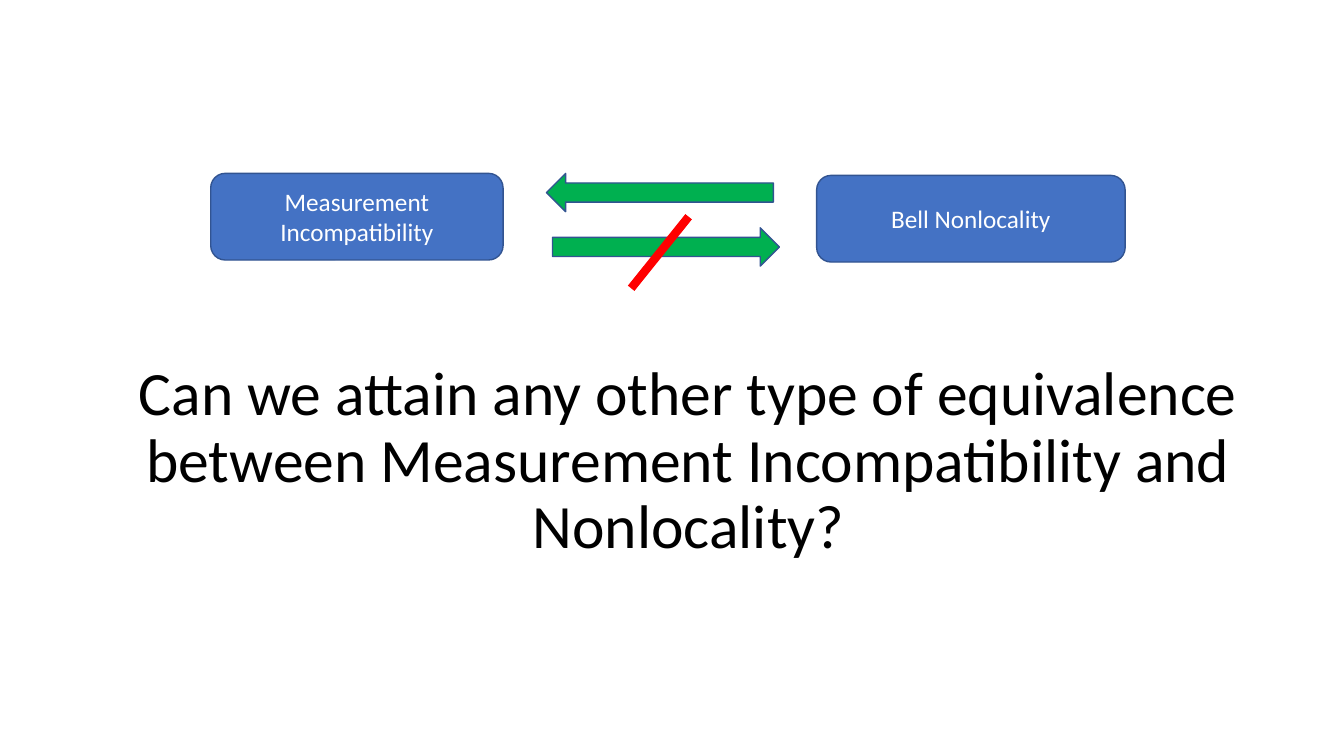
import dataclasses

import lxml.etree
import pptx
import pptx.dml.color
import pptx.enum.shapes
import pptx.enum.text
import pptx.oxml.ns
import pptx.shapes.autoshape
import pptx.slide
import pptx.util

EMU_PER_PX = 9144
SHAPES = pptx.enum.shapes.MSO_SHAPE


@dataclasses.dataclass(frozen=True)
class Theme:
    font: str = "Calibri"
    title_size: int = 44
    box_size: int = 18
    outline_width: int = 1
    strike_width: int = 6
    title: str = "000000"
    box: str = "4472C4"
    box_text: str = "FFFFFF"
    outline: str = "325491"
    arrow: str = "00B050"
    strike: str = "FF0000"


@dataclasses.dataclass(frozen=True)
class Block:
    kind: pptx.enum.shapes.MSO_SHAPE
    left: int
    top: int
    width: int
    height: int
    fill: str
    text: str = ""


THEME = Theme()

BLOCKS = (
    Block(SHAPES.ROUNDED_RECTANGLE, 209, 172, 290, 86, THEME.box, "Measurement Incompatibility"),
    Block(SHAPES.ROUNDED_RECTANGLE, 810, 174, 306, 86, THEME.box, "Bell Nonlocality"),
    Block(SHAPES.LEFT_ARROW, 542, 172, 225, 38, THEME.arrow),
    Block(SHAPES.RIGHT_ARROW, 548, 226, 225, 38, THEME.arrow),
)


def px(length: int) -> pptx.util.Emu:
    return pptx.util.Emu(length * EMU_PER_PX)


def rgb(value: str) -> pptx.dml.color.RGBColor:
    return pptx.dml.color.RGBColor.from_string(value)


def write_text(
    shape: pptx.shapes.autoshape.Shape, text: str, size: int, color: str, spacing: float = 1.0
) -> None:
    text_frame = shape.text_frame
    text_frame.text = text
    text_frame.word_wrap = True
    text_frame.auto_size = pptx.enum.text.MSO_AUTO_SIZE.NONE
    text_frame.vertical_anchor = pptx.enum.text.MSO_ANCHOR.MIDDLE
    paragraph = text_frame.paragraphs[0]
    paragraph.alignment = pptx.enum.text.PP_ALIGN.CENTER
    paragraph.line_spacing = spacing
    font = paragraph.runs[0].font
    font.name = THEME.font
    font.size = pptx.util.Pt(size)
    font.color.rgb = rgb(color)


def draw_block(slide: pptx.slide.Slide, block: Block) -> None:
    shape = slide.shapes.add_shape(
        block.kind, px(block.left), px(block.top), px(block.width), px(block.height)
    )
    shape.shadow.inherit = False
    shape.fill.solid()
    shape.fill.fore_color.rgb = rgb(block.fill)
    shape.line.color.rgb = rgb(THEME.outline)
    shape.line.width = pptx.util.Pt(THEME.outline_width)
    if block.text:
        write_text(shape, block.text, THEME.box_size, THEME.box_text)


def draw_strike(slide: pptx.slide.Slide) -> None:
    connector = slide.shapes.add_connector(
        pptx.enum.shapes.MSO_CONNECTOR.STRAIGHT, px(626), px(286), px(683), px(215)
    )
    connector.line.color.rgb = rgb(THEME.strike)
    connector.line.width = pptx.util.Pt(THEME.strike_width)
    properties = connector.element.find(pptx.oxml.ns.qn("p:spPr"))
    lxml.etree.SubElement(properties, pptx.oxml.ns.qn("a:effectLst"))


def draw_question(slide: pptx.slide.Slide) -> None:
    question = slide.shapes.add_textbox(px(108), px(386), px(1150), px(145))
    write_text(
        question,
        "Can we attain any other type of equivalence between "
        "Measurement Incompatibility and Nonlocality?",
        THEME.title_size,
        THEME.title,
        spacing=0.9,
    )


def main() -> None:
    presentation = pptx.Presentation()
    presentation.slide_width = px(1333)
    presentation.slide_height = px(750)
    slide = presentation.slides.add_slide(presentation.slide_layouts[6])
    draw_question(slide)
    for block in BLOCKS:
        draw_block(slide, block)
    draw_strike(slide)
    presentation.save("out.pptx")


if __name__ == "__main__":
    main()
